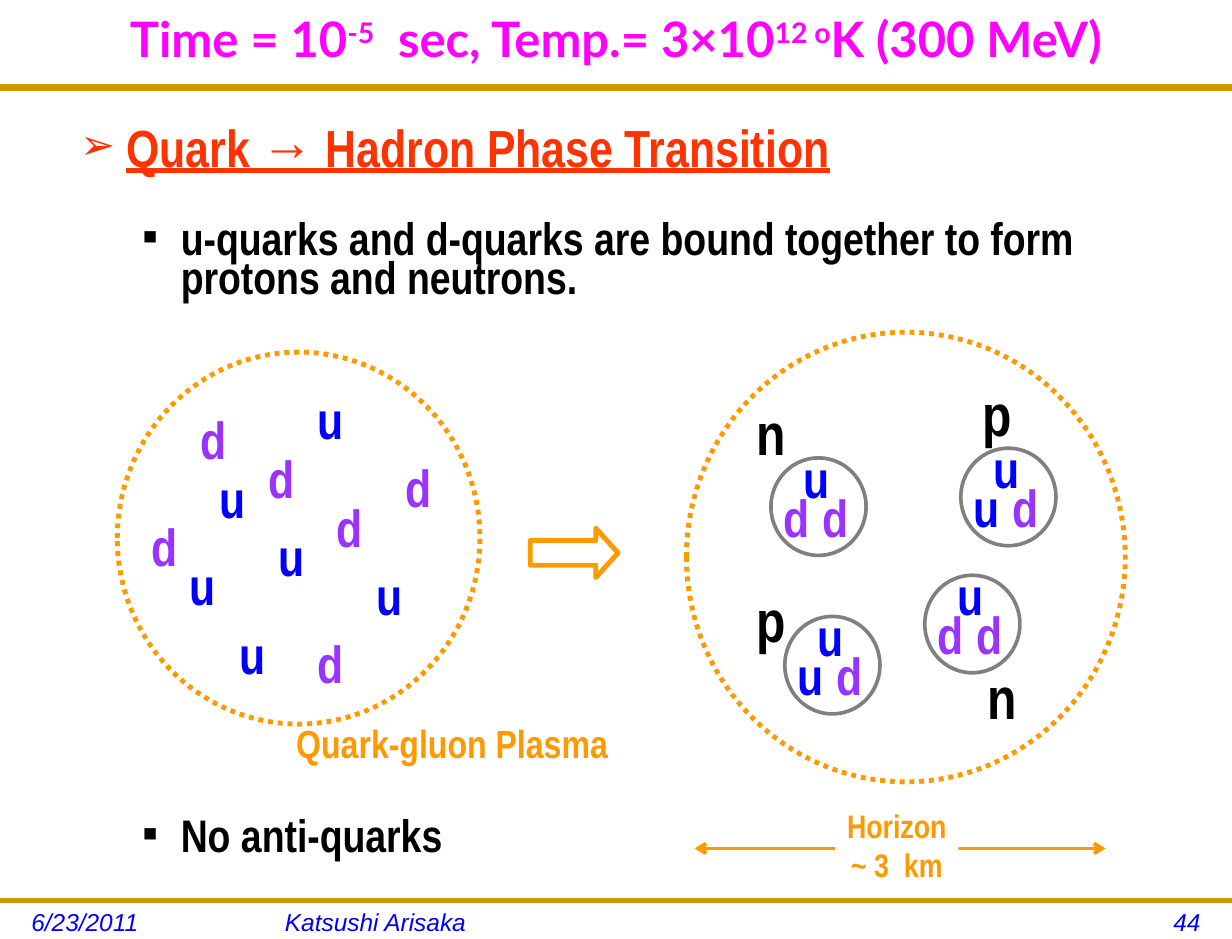
from dataclasses import dataclass

from pptx import Presentation
from pptx.dml.color import RGBColor
from pptx.enum.dml import MSO_LINE
from pptx.enum.shapes import MSO_CONNECTOR, MSO_SHAPE
from pptx.enum.text import MSO_ANCHOR, MSO_AUTO_SIZE, PP_ALIGN
from pptx.oxml.ns import qn
from pptx.util import Cm, Pt
from lxml.etree import SubElement


@dataclass(frozen=True)
class Theme:
    magenta: str = "FF00FF"
    red: str = "FF3300"
    black: str = "000000"
    blue: str = "0000FF"
    purple: str = "9933FF"
    orange: str = "FF9900"
    gold: str = "CC9900"
    grey: str = "808080"
    white: str = "FFFFFF"
    title_font: str = "Lato"
    body_font: str = "Arial Narrow"
    footer_font: str = "Arial"
    title_size: int = 30
    heading_size: int = 32
    body_size: int = 28
    quark_size: int = 32
    nucleon_size: int = 36
    caption_size: int = 24
    horizon_size: int = 20
    footer_size: int = 15


THEME = Theme()
WIDTH, HEIGHT = 26.67, 20.32
QUARK_COLORS = {"u": THEME.blue, "d": THEME.purple}

# Quarks of the plasma: left and top in cm
PLASMA = {
    "u": [(4.5, 9.96), (4.93, 13.34), (3.86, 11.86), (5.77, 11.23), (7.9, 12.07), (6.63, 8.26)],
    "d": [(7.04, 10.59), (6.63, 13.54), (5.56, 9.53), (8.53, 9.73), (3.02, 11), (4.09, 8.69)],
}
# Nucleons: name, label position, circle position
NUCLEONS = [
    ("n", (16.13, 8.46), (16.69, 9.91)),
    ("n", (21.13, 14.17), (20.02, 12.45)),
    ("p", (21.01, 8.05), (20.8, 9.7)),
    ("p", (16.13, 12.5), (16.99, 13.34)),
]
NUCLEON_QUARKS = {"n": "udd", "p": "uud"}
# Quark places relative to the circle: top, bottom left, bottom right
QUARK_OFFSETS = [(0.46, -0.38), (0.03, 0.46), (0.87, 0.46)]


def rgb(color):
    return RGBColor.from_string(color)


def add_text(para, text, *, size, color, font=THEME.body_font, bold=True,
             italic=False, underline=False, raised=0):
    span = para.add_run()
    span.text = text
    span.font.name = font
    span.font.size = Pt(size)
    span.font.bold = bold
    span.font.italic = italic
    span.font.underline = underline
    span.font.color.rgb = rgb(color)
    if raised:
        span.font._element.set("baseline", str(raised * 1000))


def place(shape, left, top, width, height):
    shape.left, shape.top = Cm(left), Cm(top)
    shape.width, shape.height = Cm(width), Cm(height)


def add_label(page, lines, left, top, width, height, *, align=PP_ALIGN.CENTER,
              fill=None, **text_format):
    box = page.shapes.add_textbox(Cm(left), Cm(top), Cm(width), Cm(height))
    box.text_frame.word_wrap = False
    if fill:
        box.fill.solid()
        box.fill.fore_color.rgb = rgb(fill)
    for number, line in enumerate(lines):
        para = box.text_frame.add_paragraph() if number else box.text_frame.paragraphs[0]
        para.alignment = align
        add_text(para, line, **text_format)


def add_outline(page, kind, left, top, width, height, *, color, weight, dash=None):
    shape = page.shapes.add_shape(kind, Cm(left), Cm(top), Cm(width), Cm(height))
    shape.shadow.inherit = False
    shape.fill.background()
    shape.line.color.rgb = rgb(color)
    shape.line.width = Pt(weight)
    if dash:
        shape.line.dash_style = dash
    return shape


def add_line(page, left, right, y, *, color, weight, arrows=False):
    line = page.shapes.add_connector(MSO_CONNECTOR.STRAIGHT, Cm(left), Cm(y), Cm(right), Cm(y))
    line.line.color.rgb = rgb(color)
    line.line.width = Pt(weight)
    if arrows:
        outline = line.line._get_or_add_ln()
        for end in ("a:headEnd", "a:tailEnd"):
            SubElement(outline, qn(end), type="arrow")
    SubElement(line._element.spPr, qn("a:effectLst"))


def add_bullet(para, symbol, *, margin, hanging, percent=100):
    properties = para._p.get_or_add_pPr()
    properties.set("marL", str(Cm(margin)))
    properties.set("indent", str(-Cm(hanging)))
    SubElement(properties, qn("a:buSzPct"), val=str(percent * 1000))
    SubElement(properties, qn("a:buFont"), typeface=THEME.footer_font)
    SubElement(properties, qn("a:buChar"), char=symbol)


def fill_title(page):
    title = page.shapes.title
    place(title, 0, 0, WIDTH, 1.9)
    title.text_frame.vertical_anchor = MSO_ANCHOR.MIDDLE
    title.text_frame.auto_size = MSO_AUTO_SIZE.NONE
    para = title.text_frame.paragraphs[0]
    para.alignment = PP_ALIGN.CENTER
    para.line_spacing = 0.8
    parts = [("Time = 10", 0), ("-5", 30), ("  sec, Temp.= 3×10", 0), ("12 o", 30), ("K (300 MeV)", 0)]
    for text, raised in parts:
        add_text(para, text, size=THEME.title_size, color=THEME.magenta,
                 font=THEME.title_font, raised=raised)


def fill_body(page):
    body = page.placeholders[1]
    place(body, 1.48, 2.74, 24.89, 16.94)
    frame = body.text_frame
    frame.auto_size = MSO_AUTO_SIZE.NONE
    frame.vertical_anchor = MSO_ANCHOR.TOP
    heading = frame.paragraphs[0]
    heading.line_spacing = 0.7
    heading.space_before = Pt(0)
    add_bullet(heading, "➢", margin=1, hanging=1, percent=80)
    add_text(heading, "Quark → Hadron Phase Transition", size=THEME.heading_size,
             color=THEME.red, underline=True)
    # The second point sits below the diagram
    points = [("u-quarks and d-quarks are bound together to form protons and neutrons.", 30),
              ("No anti-quarks", 319)]
    for text, gap in points:
        para = frame.add_paragraph()
        para.level = 1
        para.line_spacing = 0.7
        para.space_before = Pt(gap)
        add_bullet(para, "▪", margin=2.18, hanging=0.84)
        add_text(para, text, size=THEME.body_size, color=THEME.black)


def add_quark(page, flavor, left, top):
    add_label(page, [flavor], left, top, 1.07, 1.6, size=THEME.quark_size,
              color=QUARK_COLORS[flavor])


def add_nucleon(page, name, label, circle):
    left, top = circle
    add_outline(page, MSO_SHAPE.OVAL, left, top, 2.06, 2.11, color=THEME.grey, weight=2.25)
    for flavor, (right, down) in zip(NUCLEON_QUARKS[name], QUARK_OFFSETS):
        add_quark(page, flavor, left + right, top + down)
    add_label(page, [name], *label, 1.14, 1.78, size=THEME.nucleon_size, color=THEME.black)


def add_footer(page):
    entries = [("6/23/2011", 0.43, 5.28, PP_ALIGN.LEFT),
               ("Katsushi Arisaka", 5.92, 15.44, PP_ALIGN.LEFT),
               ("44", 21.59, 4.65, PP_ALIGN.RIGHT)]
    for text, left, width, align in entries:
        add_label(page, [text], left, 19.5, width, 0.82, align=align, size=THEME.footer_size,
                  color=THEME.blue, font=THEME.footer_font, bold=False, italic=True)


def main():
    deck = Presentation()
    deck.slide_width, deck.slide_height = Cm(WIDTH), Cm(HEIGHT)
    page = deck.slides.add_slide(deck.slide_layouts[1])

    # Frame: rules, footer, title and list
    add_line(page, 0, WIDTH, 1.9, color=THEME.gold, weight=4.5)
    add_line(page, 0, WIDTH, 19.48, color=THEME.gold, weight=3)
    add_footer(page)
    fill_title(page)
    fill_body(page)

    # Plasma before the transition, nucleons after it
    for bounds in [(14.86, 7.19, 9.5, 9.73), (2.54, 7.62, 7.85, 8.05)]:
        add_outline(page, MSO_SHAPE.OVAL, *bounds, color=THEME.orange, weight=3,
                    dash=MSO_LINE.ROUND_DOT)
    for flavor, positions in PLASMA.items():
        for left, top in positions:
            add_quark(page, flavor, left, top)
    for nucleon in NUCLEONS:
        add_nucleon(page, *nucleon)
    arrow = add_outline(page, MSO_SHAPE.RIGHT_ARROW, 11.48, 11.43, 1.9, 1.07,
                        color=THEME.orange, weight=3)
    arrow.adjustments[1] = 0.45

    # Captions and the horizon scale
    add_label(page, ["Quark-gluon Plasma "], 6.15, 15.44, 7.47, 1.27,
              size=THEME.caption_size, color=THEME.orange)
    add_line(page, 15.04, 23.93, 18.36, color=THEME.orange, weight=2.25, arrows=True)
    add_label(page, ["Horizon", "~ 3  km"], 18.08, 17.32, 2.67, 1.96, fill=THEME.white,
              size=THEME.horizon_size, color=THEME.orange)

    deck.save("out.pptx")


if __name__ == "__main__":
    main()
